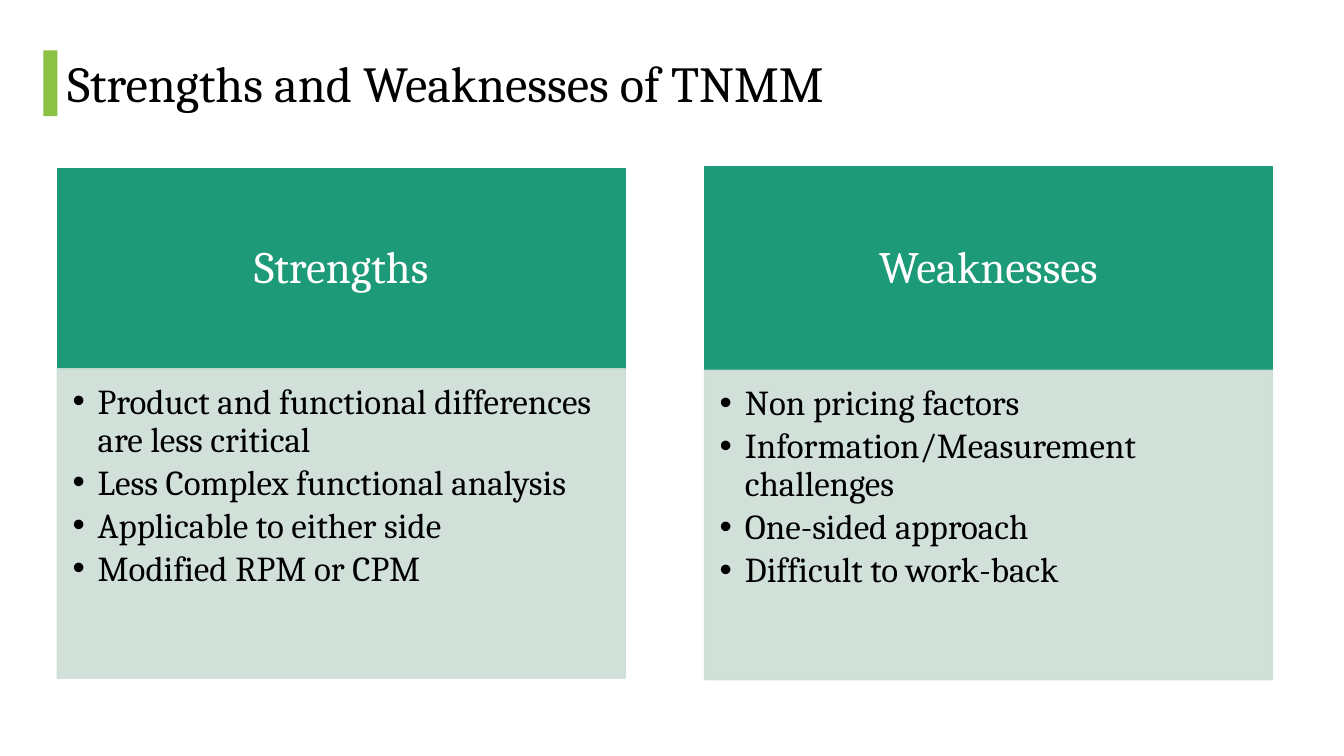
from lxml.etree import SubElement
from pptx import Presentation
from pptx.dml.color import RGBColor
from pptx.enum.shapes import MSO_SHAPE
from pptx.enum.text import MSO_ANCHOR, PP_ALIGN
from pptx.oxml.ns import qn
from pptx.util import Pt

TITLE = "Strengths and Weaknesses of TNMM"
# heading, left, header top, header height, body top, bullets
COLUMNS = [
    ("Strengths", 41, 120.2, 143.6, 263.5, [
        "Product and functional differences are less critical",
        "Less Complex functional analysis",
        "Applicable to either side",
        "Modified RPM or CPM",
    ]),
    ("Weaknesses", 503.3, 119.2, 145.4, 264.5, [
        "Non pricing factors",
        "Information/Measurement challenges",
        "One-sided approach",
        "Difficult to work-back",
    ]),
]
COLUMN_WIDTH, BODY_HEIGHT = 405.6, 221
FONT = "Cambria"
BLACK, WHITE = "000000", "FFFFFF"
GREEN, PALE, LIME = "1D9A78", "CDDED6", "8BC145"
BULLET_INDENT = 18

TITLE_FORMAT = dict(size=36, color=BLACK, align=PP_ALIGN.LEFT, after=0)
HEADER_FORMAT = dict(size=32, color=WHITE, align=PP_ALIGN.CENTER, after=0)
BULLET_FORMAT = dict(size=25, color=BLACK, align=PP_ALIGN.LEFT, after=3.75)


def rgb(value):
    return RGBColor.from_string(value)


def set_attrs(obj, values):
    for name, value in values.items():
        setattr(obj, name, value)


def add_rect(box, color, outlined=True, alpha=None):
    sp = slide.shapes.add_shape(MSO_SHAPE.RECTANGLE, *map(Pt, box))
    sp.shadow.inherit = False
    sp.fill.solid()
    sp.fill.fore_color.rgb = rgb(color)
    if outlined:
        sp.line.color.rgb = rgb(color)
        sp.line.width = Pt(1)
    else:
        sp.line.fill.background()
    if alpha:
        for clr in list(sp._element.spPr.iter(qn("a:srgbClr"))):
            SubElement(clr, qn("a:alpha"), val=str(alpha * 1000))
    return sp


def write(sp, lines, fmt, anchor, insets, bullets=False):
    """Fill a shape with one paragraph per line; insets run left, top, right, bottom."""
    tf = sp.text_frame
    sides = ("margin_left", "margin_top", "margin_right", "margin_bottom")
    set_attrs(tf, dict(zip(sides, map(Pt, insets)), word_wrap=True, vertical_anchor=anchor))
    for i, line in enumerate(lines):
        p = tf.add_paragraph() if i else tf.paragraphs[0]
        set_attrs(p, dict(alignment=fmt["align"], line_spacing=0.9,
                          space_before=Pt(0), space_after=Pt(fmt["after"])))
        r = p.add_run()
        r.text = line
        set_attrs(r.font, dict(name=FONT, size=Pt(fmt["size"])))
        r.font.color.rgb = rgb(fmt["color"])
        if bullets:
            pPr = p._p.get_or_add_pPr()
            pPr.set("marL", str(Pt(BULLET_INDENT)))
            pPr.set("indent", str(-Pt(BULLET_INDENT)))
            SubElement(pPr, qn("a:buFont"), typeface="Arial")
            SubElement(pPr, qn("a:buChar"), char="•")


prs = Presentation()
prs.slide_width, prs.slide_height = Pt(960), Pt(540)
slide = prs.slides.add_slide(prs.slide_layouts[6])

title = slide.shapes.add_textbox(Pt(41), Pt(17.3), Pt(859), Pt(89.3))
write(title, [TITLE], TITLE_FORMAT, MSO_ANCHOR.MIDDLE, (7.2, 3.6, 7.2, 3.6))
add_rect((31, 36, 10, 47), LIME, outlined=False)

for heading, left, top, height, body_top, points in COLUMNS:
    header = add_rect((left, top, COLUMN_WIDTH, height), GREEN)
    write(header, [heading], HEADER_FORMAT, MSO_ANCHOR.MIDDLE, (18, 10, 18, 10))
    body = add_rect((left, body_top, COLUMN_WIDTH, BODY_HEIGHT), PALE, alpha=90)
    write(body, points, BULLET_FORMAT, MSO_ANCHOR.TOP, (10.8, 10.8, 13.7, 16), bullets=True)

prs.save("out.pptx")
